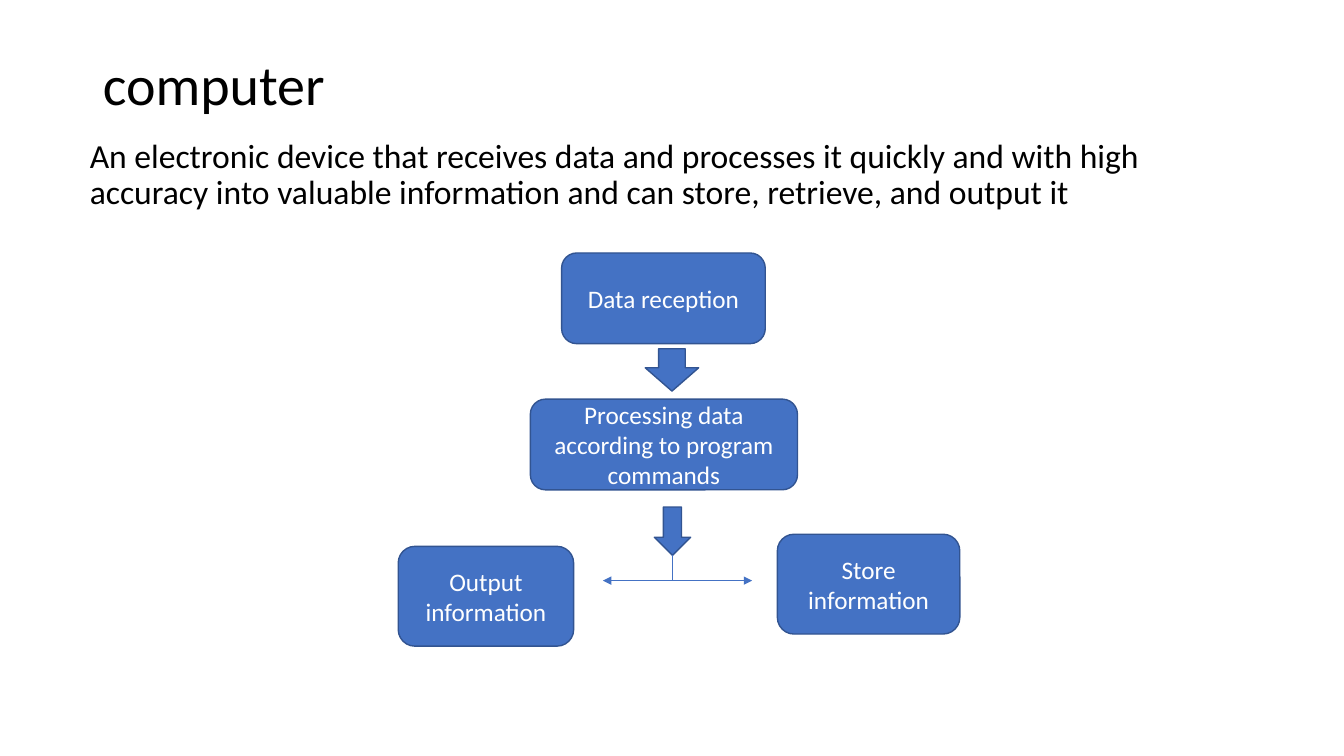
"""Build a slide that defines a computer and charts its data flow."""
from lxml.etree import SubElement
from pptx import Presentation
from pptx.dml.color import RGBColor
from pptx.enum.shapes import MSO_CONNECTOR, MSO_SHAPE
from pptx.enum.text import MSO_ANCHOR, MSO_AUTO_SIZE, PP_ALIGN
from pptx.oxml.ns import qn
from pptx.util import Inches, Pt

BLACK = RGBColor(0x00, 0x00, 0x00)
WHITE = RGBColor(0xFF, 0xFF, 0xFF)
BLUE = RGBColor(0x44, 0x72, 0xC4)
DARK_BLUE = RGBColor(0x32, 0x54, 0x91)
FONT = "Calibri"

DEFINITION = (
    "An electronic device that receives data and processes it quickly and with high "
    "accuracy into valuable information and can store, retrieve, and output it"
)
STEPS = [
    (5.57, 2.51, 2.02, 0.9, ["Data reception"]),
    (5.26, 3.96, 2.65, 0.9, ["Processing data according to program commands"]),
    (7.71, 5.3, 1.81, 0.99, ["Store information"]),
    (3.95, 5.42, 1.74, 0.99, ["Output", "information"]),
]
ARROWS = [(6.4, 3.46, 0.53, 0.42, 0.55), (6.49, 5.03, 0.36, 0.48, 0.5)]
FORK_X, FORK_TOP, FORK_BOTTOM = 6.67, 5.51, 5.76
BRANCH_ENDS = [7.46, 5.98]


def add_run(p, text, size, color):
    """Add one formatted run to a paragraph."""
    r = p.add_run()
    r.text = text
    r.font.name = FONT
    r.font.size = Pt(size)
    r.font.color.rgb = color


def fill_placeholder(sp, box, text, size, anchor, space_before):
    """Move a placeholder and give it one left-aligned paragraph."""
    sp.left, sp.top, sp.width, sp.height = map(Inches, box)
    tf = sp.text_frame
    tf.auto_size = MSO_AUTO_SIZE.NONE
    tf.vertical_anchor = anchor
    p = tf.paragraphs[0]
    p.alignment = PP_ALIGN.LEFT
    p.line_spacing = 0.9
    p.space_before = Pt(space_before)
    add_run(p, text, size, BLACK)
    return p


def remove_bullet(p):
    """Drop the bullet and the hanging indent of a paragraph."""
    pPr = p._p.get_or_add_pPr()
    pPr.set("marL", "0")
    pPr.set("indent", "0")
    SubElement(pPr, qn("a:buNone"))


def add_block(slide, kind, x, y, w, h):
    """Add a blue shape with a thin dark outline."""
    sp = slide.shapes.add_shape(kind, Inches(x), Inches(y), Inches(w), Inches(h))
    sp.shadow.inherit = False
    sp.fill.solid()
    sp.fill.fore_color.rgb = BLUE
    sp.line.color.rgb = DARK_BLUE
    sp.line.width = Pt(1)
    return sp


def add_step(slide, x, y, w, h, lines):
    """Add a rounded box with centred white text."""
    tf = add_block(slide, MSO_SHAPE.ROUNDED_RECTANGLE, x, y, w, h).text_frame
    tf.word_wrap = True
    tf.vertical_anchor = MSO_ANCHOR.MIDDLE
    for i, line in enumerate(lines):
        p = tf.add_paragraph() if i else tf.paragraphs[0]
        p.alignment = PP_ALIGN.CENTER
        add_run(p, line, 18, WHITE)


def add_down_arrow(slide, x, y, w, h, head):
    """Add a block arrow that points to the next step."""
    sp = add_block(slide, MSO_SHAPE.DOWN_ARROW, x, y, w, h)
    sp.adjustments[0] = 0.5
    sp.adjustments[1] = head


def add_branch(slide, end_x):
    """Add a bent arrow that drops from the fork and turns sideways."""
    drop, reach = FORK_BOTTOM - FORK_TOP, abs(end_x - FORK_X)
    mid_x, mid_y = (FORK_X + end_x) / 2, (FORK_TOP + FORK_BOTTOM) / 2
    left, right = Inches(mid_x - drop / 2), Inches(mid_x + drop / 2)
    top, bottom = Inches(mid_y - reach / 2), Inches(mid_y + reach / 2)
    to_right = end_x > FORK_X
    start, end = (right, left) if to_right else (left, right)
    cxn = slide.shapes.add_connector(MSO_CONNECTOR.ELBOW, start, top, end, bottom)
    cxn.line.color.rgb = BLUE
    cxn.line.width = Pt(0.5)
    spPr = cxn._element.spPr
    spPr.find(qn("a:xfrm")).set("rot", str((270 if to_right else 90) * 60000))
    spPr.find(qn("a:prstGeom")).set("prst", "bentConnector2")
    SubElement(spPr.find(qn("a:ln")), qn("a:tailEnd"), type="triangle")
    SubElement(spPr, qn("a:effectLst"))


def main():
    """Build and save the slide."""
    prs = Presentation()
    prs.slide_width, prs.slide_height = Inches(13.33), Inches(7.5)
    slide = prs.slides.add_slide(prs.slide_layouts[1])
    title, body = slide.placeholders
    fill_placeholder(title, (0.92, 0.4, 11.5, 0.93), "computer", 40, MSO_ANCHOR.MIDDLE, 0)
    p = fill_placeholder(body, (0.79, 1.33, 11.5, 5.77), DEFINITION, 24, MSO_ANCHOR.TOP, 10)
    remove_bullet(p)
    for step in STEPS:
        add_step(slide, *step)
    for arrow in ARROWS:
        add_down_arrow(slide, *arrow)
    for end_x in BRANCH_ENDS:
        add_branch(slide, end_x)
    prs.save("out.pptx")


if __name__ == "__main__":
    main()
